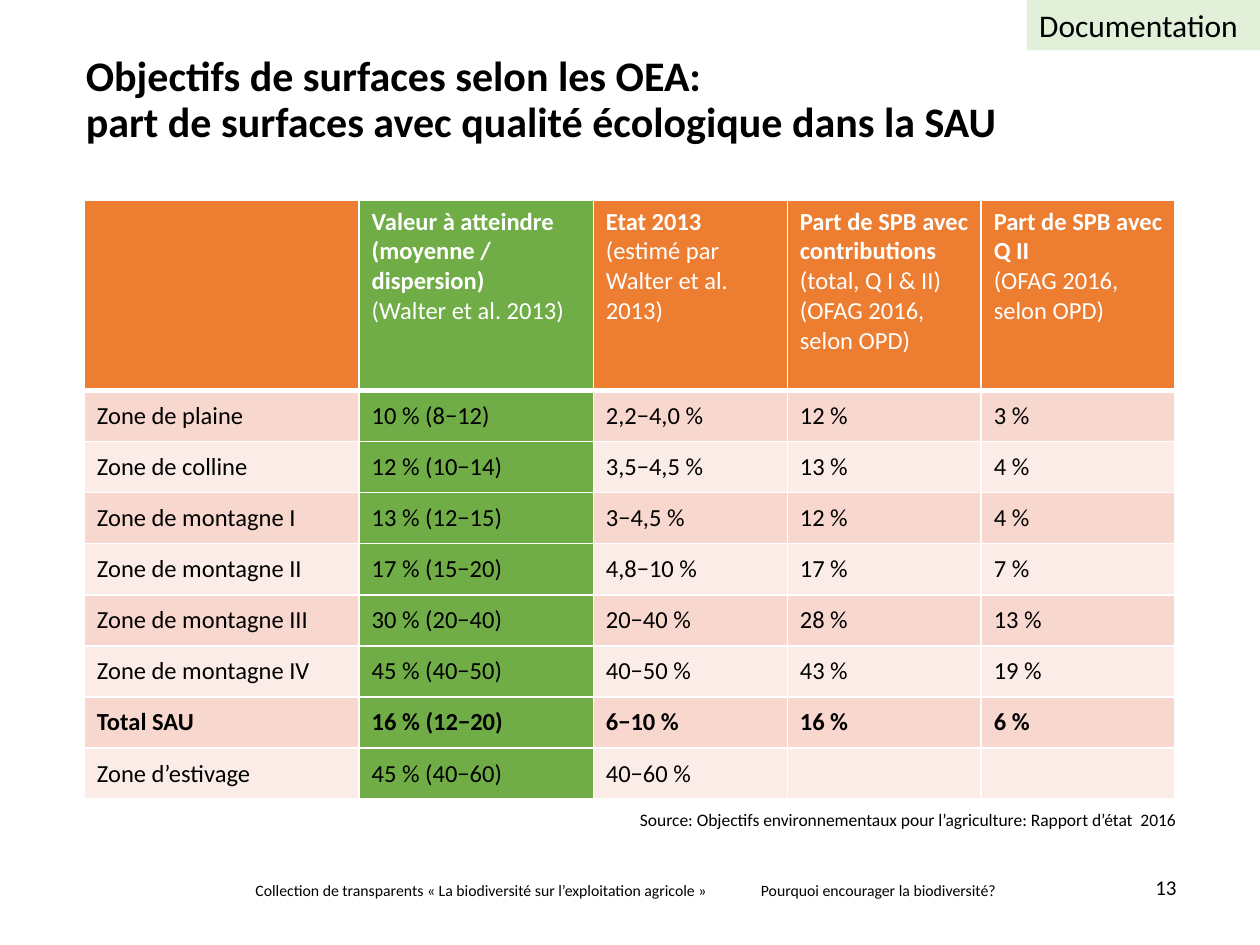
from dataclasses import dataclass

from lxml.etree import SubElement
from pptx import Presentation
from pptx.dml.color import RGBColor
from pptx.enum.shapes import MSO_SHAPE
from pptx.enum.text import MSO_ANCHOR, PP_ALIGN
from pptx.oxml import parse_xml
from pptx.oxml.ns import nsdecls, qn
from pptx.util import Cm, Pt


@dataclass(frozen=True)
class Theme:
    font: str = "Calibri"
    black: str = "000000"
    white: str = "FFFFFF"
    orange: str = "ED7D31"
    green: str = "70AD47"
    pale_green: str = "E2F0D9"
    bands: tuple = ("F8D7CE", "FCECE8")
    title: int = 24
    tag: int = 18
    table: int = 14
    page_number: int = 12
    source: int = 10
    footer: int = 9


@dataclass(frozen=True)
class Box:
    left: float
    top: float
    width: float
    height: float

    def inner(self, left, top, width, height):
        return Box(self.left + left, self.top + top, width, height)

    def lengths(self):
        return [Cm(value) for value in (self.left, self.top, self.width, self.height)]


THEME = Theme()
COLUMN_WIDTHS = (5.54, 4.72, 3.91, 3.91, 3.91)
HEADER_HEIGHT, ROW_HEIGHT = 3.83, 1.03
TARGET_COLUMN = 1
TOTAL_LABEL = "Total SAU"

HEADERS = [
    [],
    [[("Valeur à atteindre", True)], [("(moyenne /\ndispersion)", True)],
     [("(Walter et al. 2013)", False)]],
    [[("Etat 2013", True)], [("(estimé par Walter et al. 2013)", False)]],
    [[("Part de SPB avec contributions \n", True), ("(total, Q I & II)", False)],
     [("(OFAG 2016, \nselon OPD)", False)]],
    [[("Part de SPB avec Q II", True)], [("(OFAG 2016, \nselon OPD)", False)]],
]
ZONES = [
    ("Zone de plaine", "10 % (8−12)", "2,2−4,0 %", "12 %", "3 %"),
    ("Zone de colline", "12 % (10−14)", "3,5−4,5 %", "13 %", "4 %"),
    ("Zone de montagne I", "13 % (12−15)", "3−4,5 %", "12 %", "4 %"),
    ("Zone de montagne II", "17 % (15−20)", "4,8−10 %", "17 %", "7 %"),
    ("Zone de montagne III", "30 % (20−40)", "20−40 %", "28 %", "13 %"),
    ("Zone de montagne IV", "45 % (40−50)", "40−50 %", "43 %", "19 %"),
    (TOTAL_LABEL, "16 % (12−20)", "6−10 %", "16 %", "6 %"),
    ("Zone d’estivage", "45 % (40−60)", "40−60 %", "", ""),
]


def apply_format(target, values):
    for name, value in values.items():
        setattr(target, name, value)


def add_break(para, size):
    para.add_line_break()
    line_break = para._p.findall(qn("a:br"))[-1]
    SubElement(line_break, qn("a:rPr")).set("sz", str(size * 100))


def write_paragraphs(frame, paragraphs, size, color=THEME.black, **para_format):
    for number, spans in enumerate(paragraphs):
        para = frame.add_paragraph() if number else frame.paragraphs[0]
        apply_format(para, para_format)
        for text, bold in spans:
            for line_number, line in enumerate(text.split("\n")):
                if line_number:
                    add_break(para, size)
                if line:
                    span = para.add_run()
                    span.text = line
                    apply_format(span.font, {"name": THEME.font, "size": Pt(size), "bold": bold})
                    span.font.color.rgb = RGBColor.from_string(color)


def add_label(page, box, text, size, bold=False, frame_format=None, **para_format):
    frame = page.shapes.add_textbox(*box.lengths()).text_frame
    apply_format(frame, {"word_wrap": True, **(frame_format or {})})
    write_paragraphs(frame, [[(text, bold)]], size, **para_format)


def fill_solid(target, color):
    target.fill.solid()
    target.fill.fore_color.rgb = RGBColor.from_string(color)


def set_borders(cell, top=1, bottom=1):
    widths = {"lnL": 1, "lnR": 1, "lnT": top, "lnB": bottom}
    properties = cell._tc.get_or_add_tcPr()
    for position, (side, width) in enumerate(widths.items()):
        properties.insert(position, parse_xml(
            f'<a:{side} {nsdecls("a")} w="{Pt(width)}"><a:solidFill>'
            f'<a:srgbClr val="{THEME.white}"/></a:solidFill></a:{side}>'))


def add_tag(page, box):
    tag = page.shapes.add_shape(MSO_SHAPE.RECTANGLE, *box.lengths())
    tag.shadow.inherit = False
    fill_solid(tag, THEME.pale_green)
    tag.line.fill.background()
    apply_format(tag.text_frame, {"word_wrap": True, "vertical_anchor": MSO_ANCHOR.TOP})
    write_paragraphs(tag.text_frame, [[("Documentation", False)]], THEME.tag,
                     alignment=PP_ALIGN.LEFT)


def add_title(page, box):
    margins = dict.fromkeys(("margin_left", "margin_top", "margin_right", "margin_bottom"), 0)
    add_label(page, box,
              "Objectifs de surfaces selon les OEA: \n"
              "part de surfaces avec qualité écologique dans la SAU",
              THEME.title, bold=True, frame_format=margins, line_spacing=0.9)


def add_zone_table(page, box):
    shape = page.shapes.add_table(len(ZONES) + 1, len(COLUMN_WIDTHS), *box.lengths())
    table = shape.table
    apply_format(table, {"first_row": False, "horz_banding": False})
    for column, width in zip(table.columns, COLUMN_WIDTHS):
        column.width = Cm(width)
    for number, row in enumerate(table.rows):
        row.height = Cm(ROW_HEIGHT if number else HEADER_HEIGHT)

    for column, paragraphs in enumerate(HEADERS):
        cell = table.cell(0, column)
        fill_solid(cell, THEME.green if column == TARGET_COLUMN else THEME.orange)
        set_borders(cell, bottom=3)
        write_paragraphs(cell.text_frame, paragraphs, THEME.table, THEME.white)

    for number, values in enumerate(ZONES):
        for column, text in enumerate(values):
            cell = table.cell(number + 1, column)
            band = THEME.bands[number % 2]
            fill_solid(cell, THEME.green if column == TARGET_COLUMN else band)
            set_borders(cell, top=1 if number else 3)
            cell.vertical_anchor = MSO_ANCHOR.MIDDLE
            write_paragraphs(cell.text_frame, [[(text, values[0] == TOTAL_LABEL)]], THEME.table)


def add_source(page, box):
    add_label(page, box,
              "Source: Objectifs environnementaux pour l’agriculture: Rapport d’état  2016",
              THEME.source, alignment=PP_ALIGN.RIGHT)


def add_footer(page, box):
    add_label(page, box.inner(0, 0.36, 10.6, 0.64),
              "Collection de transparents « La biodiversité sur l’exploitation agricole »",
              THEME.footer)
    add_label(page, box.inner(10.19, 0.36, 5.4, 0.64),
              "Pourquoi encourager la biodiversité?", THEME.footer)
    add_label(page, box.inner(box.width - 2.21, 0, 2.21, box.height), "13", THEME.page_number,
              frame_format={"margin_left": 0, "margin_right": 0,
                            "vertical_anchor": MSO_ANCHOR.BOTTOM},
              alignment=PP_ALIGN.RIGHT)


def main():
    deck = Presentation()
    apply_format(deck, {"slide_width": Cm(25.4), "slide_height": Cm(19.05)})
    page = deck.slides.add_slide(deck.slide_layouts[6])
    add_title(page, Box(1.73, 1.12, 21.97, 1.75))
    add_zone_table(page, Box(1.7, 4.04, sum(COLUMN_WIDTHS),
                             HEADER_HEIGHT + len(ZONES) * ROW_HEIGHT))
    add_source(page, Box(11.76, 16.18, 12.19, 0.69))
    add_footer(page, Box(4.9, 17.27, 18.82, 0.99))
    add_tag(page, Box(20.7, 0, 4.7, 1.02))
    deck.save("out.pptx")


if __name__ == "__main__":
    main()
